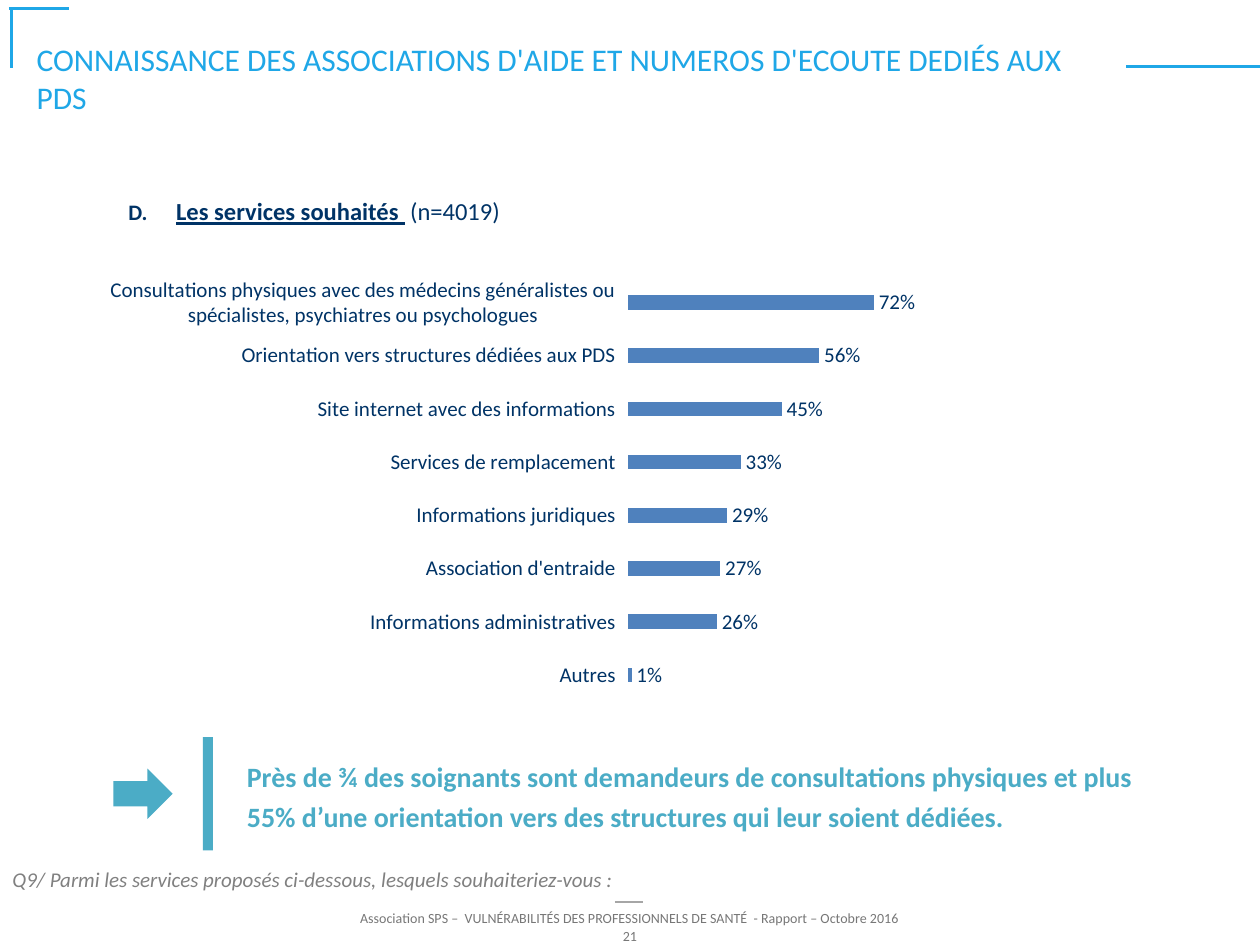
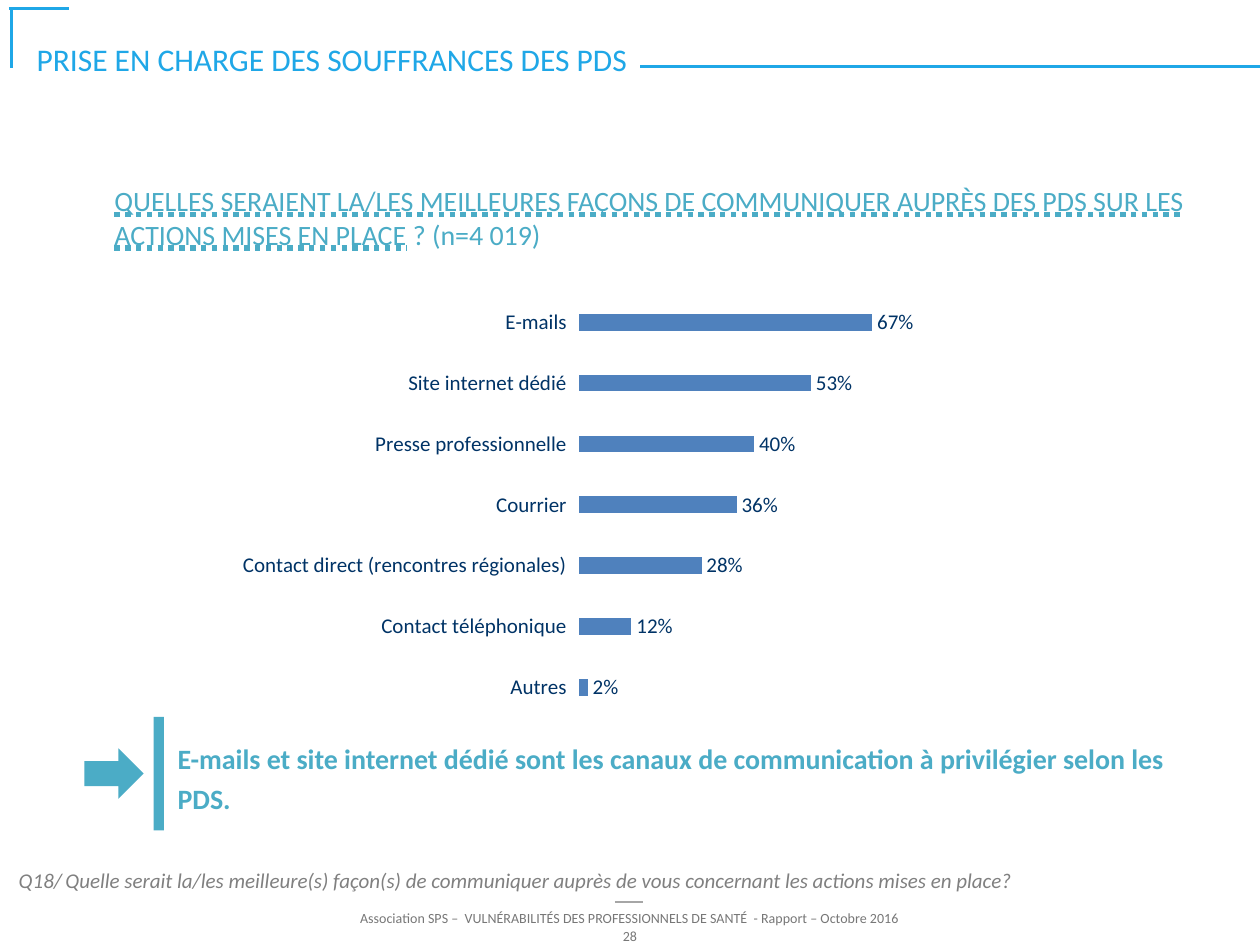
from dataclasses import dataclass

from lxml import etree
from pptx import Presentation
from pptx.chart.data import CategoryChartData
from pptx.dml.color import RGBColor
from pptx.enum.chart import XL_CHART_TYPE, XL_LABEL_POSITION, XL_TICK_LABEL_POSITION, XL_TICK_MARK
from pptx.enum.shapes import MSO_CONNECTOR, MSO_SHAPE
from pptx.enum.text import MSO_ANCHOR, MSO_AUTO_SIZE, MSO_UNDERLINE, PP_ALIGN
from pptx.oxml import parse_xml
from pptx.oxml.ns import nsdecls, qn
from pptx.util import Inches, Pt


@dataclass(frozen=True)
class Theme:
    font: str = "Calibri"
    sky: RGBColor = RGBColor.from_string("1FA7E7")
    teal: RGBColor = RGBColor.from_string("4BACC6")
    navy: RGBColor = RGBColor.from_string("003366")
    bar: RGBColor = RGBColor.from_string("4F81BD")
    question_grey: RGBColor = RGBColor.from_string("808080")
    footer_grey: RGBColor = RGBColor.from_string("777777")
    rule_grey: RGBColor = RGBColor.from_string("A6A6A6")
    title_size: int = 18
    takeaway_size: int = 16
    heading_size: int = 14
    body_size: int = 12
    footer_size: int = 8


theme = Theme()
FOOTER = "Association SPS –  VULNÉRABILITÉS DES PROFESSIONNELS DE SANTÉ  - Rapport – Octobre 2016"

SLIDES = [
    dict(
        title="CONNAISSANCE DES ASSOCIATIONS D'AIDE ET NUMEROS D'ECOUTE DEDIÉS AUX PDS",
        title_width=8.75,
        number="21",
        heading=["Les services souhaités ", " (n=4019)"],
        heading_box=(0.43, 1.44, 8.66, 0.84),
        heading_size=theme.heading_size,
        heading_color=theme.navy,
        underline=MSO_UNDERLINE.SINGLE_LINE,
        letter=4,
        answers=[
            ("Consultations physiques avec des médecins généralistes ou "
             "spécialistes, psychiatres ou psychologues", 0.72),
            ("Orientation vers structures dédiées aux PDS", 0.56),
            ("Site internet avec des informations", 0.45),
            ("Services de remplacement", 0.33),
            ("Informations juridiques", 0.29),
            ("Association d'entraide", 0.27),
            ("Informations administratives", 0.26),
            ("Autres", 0.01),
        ],
        chart_corner=(0.81, 2.04),
        plot=dict(x=0.589, y=0.037, w=0.382, h=0.841),
        takeaway="Près de ¾ des soignants sont demandeurs de consultations physiques et plus "
                 "55% d’une orientation vers des structures qui leur soient dédiées.",
        takeaway_box=(1.85, 5.9, 7.64, 0.79),
        arrow_left=0.9,
        marker_corner=(1.61, 5.85),
        question="Q9/ Parmi les services proposés ci-dessous, lesquels souhaiteriez-vous :",
        question_corner=(0, 6.82),
    ),
    dict(
        title="PRISE EN CHARGE DES SOUFFRANCES DES PDS",
        title_width=4.89,
        number="28",
        heading=["QUELLES SERAIENT LA/LES MEILLEURES FAÇONS DE COMMUNIQUER AUPRÈS DES PDS "
                 "SUR LES ACTIONS MISES EN PLACE", " ? (n=4 019)"],
        heading_box=(0.51, 1.41, 9.13, 0.64),
        heading_size=theme.takeaway_size,
        heading_color=theme.teal,
        underline=MSO_UNDERLINE.DOTTED_HEAVY_LINE,
        letter=None,
        answers=[
            ("E-mails", 0.67),
            ("Site internet dédié", 0.53),
            ("Presse professionnelle", 0.4),
            ("Courrier", 0.36),
            ("Contact direct (rencontres régionales)", 0.28),
            ("Contact téléphonique", 0.12),
            ("Autres", 0.02),
        ],
        chart_corner=(0.98, 2.18),
        plot=dict(x=0.51, y=0.034, w=0.49, h=0.841),
        takeaway="E-mails et site internet dédié sont les canaux de communication "
                 "à privilégier selon les PDS.",
        takeaway_box=(1.3, 5.67, 8.35, 0.96),
        arrow_left=0.67,
        marker_corner=(1.22, 5.69),
        question="Q18/\tQuelle serait la/les meilleure(s) façon(s) de communiquer auprès de vous "
                 "concernant les actions mises en place?",
        question_corner=(0.05, 6.83),
    ),
]


def add_text(slide, box, texts, size, color, anchor=MSO_ANCHOR.TOP):
    """Add a wrapped text box holding one paragraph with a run per text."""
    frame = slide.shapes.add_textbox(*map(Inches, box)).text_frame
    frame.word_wrap = True
    frame.vertical_anchor = anchor
    paragraph = frame.paragraphs[0]
    for text in texts:
        run = paragraph.add_run()
        run.text = text
        run.font.name = theme.font
        run.font.size = Pt(size)
        run.font.color.rgb = color
    return frame, paragraph


def add_rule(slide, ends, color, width):
    rule = slide.shapes.add_connector(MSO_CONNECTOR.STRAIGHT, *map(Inches, ends))
    rule.line.color.rgb = color
    rule.line.width = Pt(width)
    etree.SubElement(rule._element.spPr, qn("a:effectLst"))


prs = Presentation()
prs.slide_width, prs.slide_height = Inches(10), Inches(7.5)
title_only = prs.slide_layouts[5]

for content in SLIDES:
    slide = prs.slides.add_slide(title_only)

    # Title, corner bracket and header rule
    title = slide.shapes.title
    title.left, title.top = Inches(0.19), Inches(0.27)
    title.width, title.height = Inches(content["title_width"]), Inches(0.41)
    title.text_frame.text = content["title"]
    title.text_frame.vertical_anchor = MSO_ANCHOR.TOP
    title.text_frame.auto_size = MSO_AUTO_SIZE.SHAPE_TO_FIT_TEXT
    heading_line = title.text_frame.paragraphs[0]
    heading_line.alignment = PP_ALIGN.LEFT
    title_font = heading_line.runs[0].font
    title_font.name, title_font.size = theme.font, Pt(theme.title_size)
    title_font.color.rgb = theme.sky

    title_right = 0.19 + content["title_width"]
    for ends in [(title_right, 0.53, 10, 0.53), (0.07, 0.07, 0.55, 0.07), (0.09, 0.07, 0.09, 0.54)]:
        add_rule(slide, ends, theme.sky, 1.5)

    # Footer
    add_rule(slide, (4.88, 7.16, 5.1, 7.16), theme.rule_grey, 1)
    for box, text in [((1.43, 7.17, 7.14, 0.24), FOOTER), ((4.8, 7.31, 0.4, 0.24), content["number"])]:
        _, footer = add_text(slide, box, [text], theme.footer_size, theme.footer_grey)
        footer.alignment = PP_ALIGN.CENTER

    # Heading
    _, heading = add_text(slide, content["heading_box"], content["heading"],
                          content["heading_size"], content["heading_color"])
    heading.runs[0].font.underline = content["underline"]
    properties = heading._p.get_or_add_pPr()
    if content["letter"]:
        properties.set("marL", str(Inches(0.87)))
        properties.set("indent", str(Inches(-0.38)))
        color = etree.SubElement(properties, qn("a:buClr"))
        etree.SubElement(color, qn("a:srgbClr"), val=str(theme.navy))
        etree.SubElement(properties, qn("a:buSzPct"), val="90000")
        etree.SubElement(properties, qn("a:buAutoNum"), type="alphaUcPeriod",
                         startAt=str(content["letter"]))
        heading.line_spacing = 1.3
        heading.runs[0].font.bold = True
    else:
        properties.set("marL", str(Inches(0.3)))
        properties.set("indent", "0")

    # Answers, listed from the top; a bar chart stacks its categories from the bottom
    data = CategoryChartData(number_format="0%")
    bottom_up = content["answers"][::-1]
    data.categories = [answer for answer, _ in bottom_up]
    data.add_series("Series 1", [share for _, share in bottom_up])
    left, top = content["chart_corner"]
    chart = slide.shapes.add_chart(XL_CHART_TYPE.BAR_CLUSTERED, Inches(left), Inches(top),
                                   Inches(7.09), Inches(4.02), data).chart
    chart.has_legend = chart.has_title = False
    chart.font.name, chart.font.size = theme.font, Pt(theme.body_size)
    chart.font.color.rgb = theme.navy

    answer_axis, share_axis = chart.category_axis, chart.value_axis
    answer_axis.tick_label_position = XL_TICK_LABEL_POSITION.LOW
    answer_axis.major_tick_mark = answer_axis.minor_tick_mark = XL_TICK_MARK.NONE
    answer_axis.format.line.fill.background()
    share_axis.minimum_scale, share_axis.maximum_scale = 0, 1
    share_axis.has_major_gridlines = False
    share_axis.visible = False

    bars = chart.plots[0]
    bars.gap_width = 264
    bars.vary_by_categories = False
    bars.series[0].format.fill.solid()
    bars.series[0].format.fill.fore_color.rgb = theme.bar
    bars.has_data_labels = True
    labels = bars.data_labels
    labels.show_value = True
    labels.number_format, labels.number_format_is_linked = "0%", False
    labels.position = XL_LABEL_POSITION.OUTSIDE_END
    labels.font.name, labels.font.size = theme.font, Pt(theme.body_size)
    labels.font.color.rgb = theme.navy

    plot_area = chart._chartSpace.chart.plotArea
    for automatic_layout in plot_area.findall(qn("c:layout")):
        plot_area.remove(automatic_layout)
    places = "".join(f'<c:{side} val="{value}"/>' for side, value in content["plot"].items())
    plot_area.insert(0, parse_xml(
        f'<c:layout {nsdecls("c")}><c:manualLayout><c:layoutTarget val="inner"/>'
        f'<c:xMode val="edge"/><c:yMode val="edge"/>{places}</c:manualLayout></c:layout>'))

    # Takeaway with its arrow and marker bar
    frame, takeaway = add_text(slide, content["takeaway_box"], [content["takeaway"]],
                               theme.takeaway_size, theme.teal, MSO_ANCHOR.MIDDLE)
    frame.margin_left = frame.margin_right = Inches(0.11)
    takeaway.line_spacing = 1.2
    takeaway.runs[0].font.bold = True

    marker_left, marker_top = content["marker_corner"]
    for kind, box in [
        (MSO_SHAPE.RIGHT_ARROW, (content["arrow_left"], marker_top + 0.25, 0.47, 0.4)),
        (MSO_SHAPE.RECTANGLE, (marker_left, marker_top, 0.08, 0.9)),
    ]:
        accent = slide.shapes.add_shape(kind, *map(Inches, box))
        accent.shadow.inherit = False
        accent.fill.solid()
        accent.fill.fore_color.rgb = theme.teal
        accent.line.fill.background()

    # Survey question
    _, question = add_text(slide, (*content["question_corner"], 10 - content["question_corner"][0], 0.31),
                           [content["question"]], theme.body_size, theme.question_grey,
                           MSO_ANCHOR.MIDDLE)
    question.runs[0].font.italic = True
    if "\t" in content["question"]:
        tabs = etree.SubElement(question._p.get_or_add_pPr(), qn("a:tabLst"))
        etree.SubElement(tabs, qn("a:tab"), pos=str(Inches(0.37)), algn="l")

prs.save("out.pptx")
